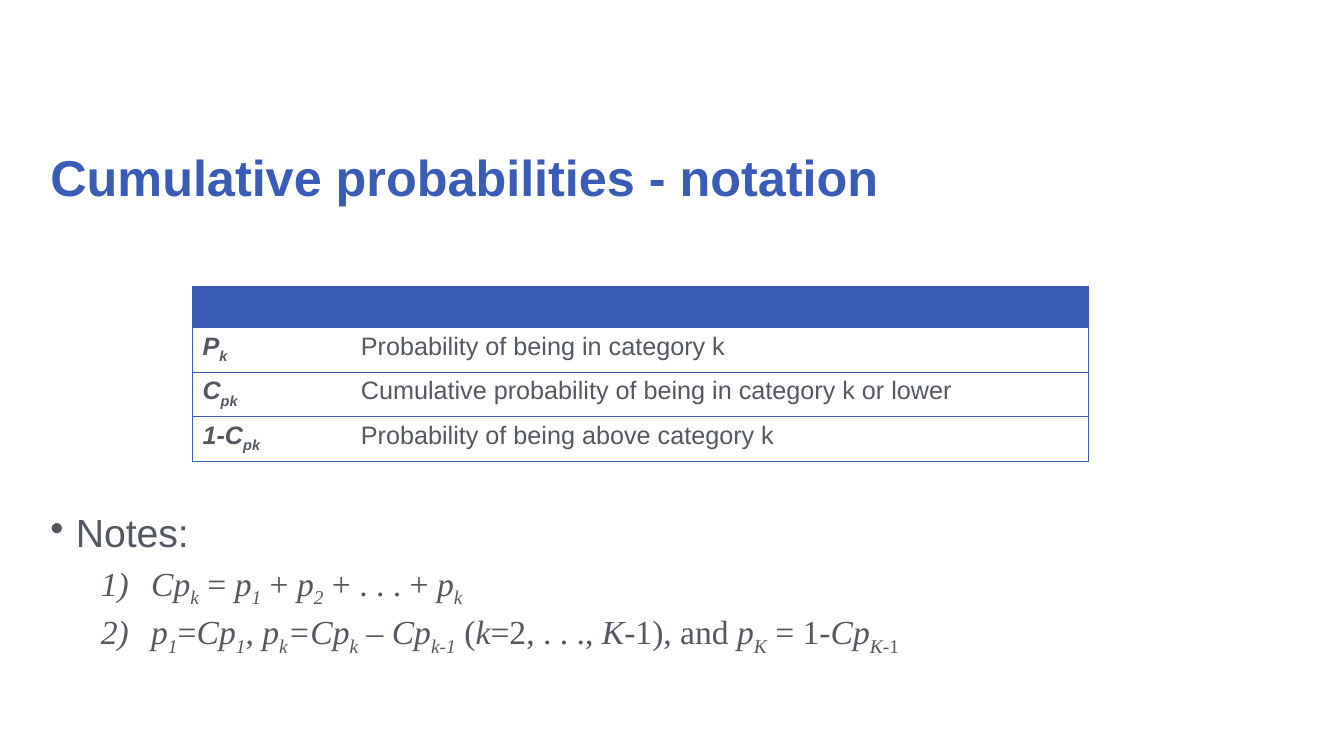
from dataclasses import dataclass

from lxml.etree import SubElement
from pptx import Presentation
from pptx.dml.color import RGBColor
from pptx.enum.text import MSO_ANCHOR
from pptx.oxml import parse_xml
from pptx.oxml.ns import nsdecls, qn
from pptx.util import Cm, Pt


@dataclass(frozen=True)
class Theme:
    blue: str = "3A5CB7"
    grey: str = "545860"
    white: str = "FFFFFF"
    sans: str = "Arial"
    serif: str = "Times New Roman"
    title_size: int = 36
    heading_size: int = 28
    formula_size: int = 24
    table_size: int = 18
    border_width: float = 0.5


@dataclass(frozen=True)
class Box:
    left: float
    top: float
    width: float
    height: float

    def lengths(self):
        return Cm(self.left), Cm(self.top), Cm(self.width), Cm(self.height)


THEME = Theme()

DEFINITIONS = [
    ([("P", "bold italic"), ("k", "bold italic sub")],
     "Probability of being in category k"),
    ([("C", "bold italic"), ("pk", "bold italic sub")],
     "Cumulative probability of being in category k or lower"),
    ([("1-C", "bold italic"), ("pk", "bold italic sub")],
     "Probability of being above category k"),
]

FORMULAS = [
    [("Cp", "italic"), ("k", "italic sub"), (" = ", ""),
     ("p", "italic"), ("1", "italic sub"), (" + ", ""),
     ("p", "italic"), ("2", "italic sub"), (" + . . . + ", ""),
     ("p", "italic"), ("k", "italic sub")],
    [("p", "italic"), ("1", "italic sub"), ("=", ""),
     ("Cp", "italic"), ("1", "italic sub"), (", ", ""),
     ("p", "italic"), ("k", "italic sub"), ("=Cp", "italic"),
     ("k", "italic sub"), (" – Cp", "italic"), ("k-1", "italic sub"),
     (" (", ""), ("k", "italic"), ("=2, . . ., ", ""), ("K", "italic"),
     ("-1), and ", ""), ("p", "italic"), ("K", "italic sub"),
     (" = 1-", ""), ("Cp", "italic"), ("K", "italic sub"), ("-1", "sub")],
]


def write_runs(paragraph, pieces, font_name, size, color):
    for text, style in pieces:
        run = paragraph.add_run()
        run.text = text
        font = run.font
        font.name = font_name
        font.size = Pt(size)
        font.color.rgb = RGBColor.from_string(color)
        font.bold = "bold" in style
        font.italic = "italic" in style
        if "sub" in style:
            run._r.get_or_add_rPr().set("baseline", "-25000")


def add_bullet(paragraph, tag, margin, hanging, **attributes):
    properties = paragraph._p.get_or_add_pPr()
    properties.set("marL", str(Cm(margin)))
    properties.set("indent", str(-Cm(hanging)))
    SubElement(properties, qn(tag), attributes)


def add_text_frame(slide, box, anchor):
    text_frame = slide.shapes.add_textbox(*box.lengths()).text_frame
    text_frame.word_wrap = True
    text_frame.vertical_anchor = anchor
    return text_frame


def add_title(slide, box):
    paragraph = add_text_frame(slide, box, MSO_ANCHOR.MIDDLE).paragraphs[0]
    paragraph.line_spacing = 0.9
    write_runs(paragraph, [("Cumulative probabilities - notation", "bold")],
               THEME.sans, THEME.title_size, THEME.blue)


def set_borders(cell, visible_sides):
    properties = cell._tc.get_or_add_tcPr()
    for position, side in enumerate("LRTB"):
        paint = "<a:noFill/>"
        if side in visible_sides:
            paint = f'<a:solidFill><a:srgbClr val="{THEME.blue}"/></a:solidFill>'
        line = parse_xml(f'<a:ln{side} {nsdecls("a")} w="{Pt(THEME.border_width)}">'
                         f'{paint}</a:ln{side}>')
        properties.insert(position, line)


def add_definition_table(slide, box, symbol_width):
    row_count = len(DEFINITIONS) + 1
    table = slide.shapes.add_table(row_count, 2, *box.lengths()).table
    table.horz_banding = False
    table.columns[0].width = Cm(symbol_width)
    table.columns[1].width = Cm(box.width - symbol_width)
    for row_index, row in enumerate(table.rows):
        row.height = Cm(box.height / row_count)
        for cell, outer_side in zip(row.cells, "LR"):
            cell.fill.solid()
            fill_color = THEME.white if row_index else THEME.blue
            cell.fill.fore_color.rgb = RGBColor.from_string(fill_color)
            cell.text_frame.paragraphs[0].font.size = Pt(THEME.table_size)
            set_borders(cell, outer_side + "TB")
    for row_index, (symbol, meaning) in enumerate(DEFINITIONS, start=1):
        for column_index, pieces in enumerate((symbol, [(meaning, "")])):
            paragraph = table.cell(row_index, column_index).text_frame.paragraphs[0]
            write_runs(paragraph, pieces, THEME.sans, THEME.table_size, THEME.grey)


def add_formula_list(slide, box):
    text_frame = add_text_frame(slide, box, MSO_ANCHOR.TOP)
    heading = text_frame.paragraphs[0]
    add_bullet(heading, "a:buChar", 0.64, 0.64, char="•")
    heading.line_spacing = 0.9
    write_runs(heading, [("Notes:", "")], THEME.sans, THEME.heading_size, THEME.grey)
    for formula in FORMULAS:
        paragraph = text_frame.add_paragraph()
        paragraph.level = 1
        add_bullet(paragraph, "a:buAutoNum", 2.54, 1.27, type="arabicParenR")
        paragraph.line_spacing = 0.9
        paragraph.space_before = Pt(5)
        write_runs(paragraph, formula, THEME.serif, THEME.formula_size, THEME.grey)


def main():
    presentation = Presentation()
    presentation.slide_width = Cm(33.87)
    presentation.slide_height = Cm(19.05)
    slide = presentation.slides.add_slide(presentation.slide_layouts[6])
    add_title(slide, Box(1.02, 2.69, 31.85, 3.68))
    add_formula_list(slide, Box(1.02, 12.83, 31.85, 4.45))
    add_definition_table(slide, Box(4.85, 7.22, 22.58, 4.12), symbol_width=3.99)
    presentation.save("out.pptx")


if __name__ == "__main__":
    main()
